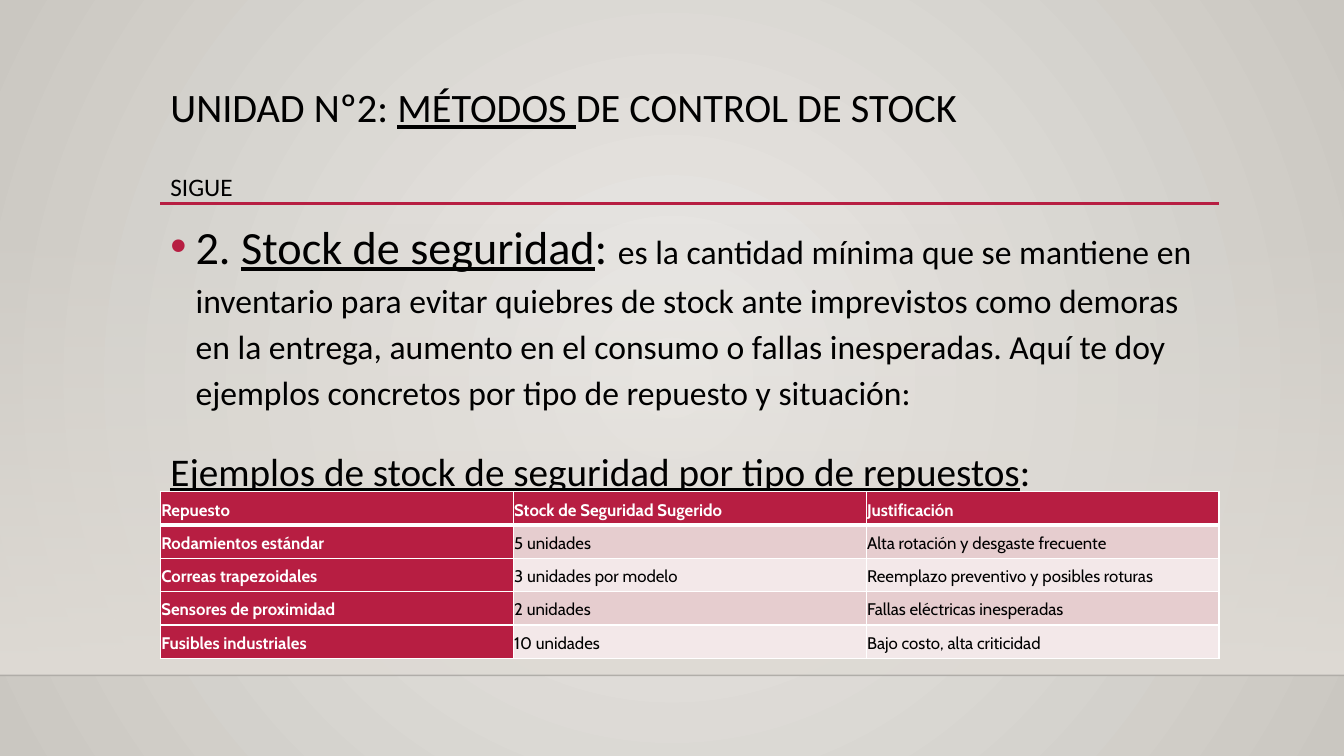
from lxml.etree import SubElement
from pptx import Presentation
from pptx.dml.color import RGBColor
from pptx.enum.shapes import MSO_CONNECTOR, MSO_SHAPE
from pptx.enum.text import MSO_ANCHOR, MSO_AUTO_SIZE, PP_ALIGN
from pptx.oxml.ns import qn
from pptx.util import Inches, Pt

RED = RGBColor(0xB7, 0x1E, 0x42)
BLACK = RGBColor(0, 0, 0)
WHITE = RGBColor(255, 255, 255)
CENTRE_GREY = RGBColor(0xEC, 0xEA, 0xE7)
EDGE_GREY = RGBColor(0xCA, 0xC7, 0xC1)
WALL = RGBColor(0xDF, 0xDB, 0xD5)
BAND_DARK = RGBColor(0xE6, 0xCD, 0xCF)
BAND_LIGHT = RGBColor(0xF3, 0xE8, 0xE9)

prs = Presentation()
prs.slide_width, prs.slide_height = Inches(13.33), Inches(7.5)
W = prs.slide_width
LEFT, WIDTH = Inches(1.59), Inches(10.5)
RULE_Y, FLOOR_Y = Inches(2.02), Inches(6.7)
s = prs.slides.add_slide(prs.slide_layouts[1])
title, body = s.shapes.title, s.placeholders[1]


def add_runs(p, runs, **common):
    for text, formats in runs:
        r = p.add_run()
        r.text = text
        for name, value in {**common, **formats}.items():
            if name == "color":
                r.font.color.rgb = value
            else:
                setattr(r.font, name, value)


def set_stops(fill, colors):
    fill.gradient()
    for stop, color, position in zip(fill.gradient_stops, colors, (0, 1)):
        stop.color.rgb = color
        stop.position = position


# Background: radial gradient
set_stops(s.background.fill, (CENTRE_GREY, EDGE_GREY))
grad = s._element.find(".//" + qn("p:bg")).find(".//" + qn("a:gradFill"))
grad.remove(grad.find(qn("a:lin")))
circle = SubElement(grad, qn("a:path"), path="circle")
SubElement(circle, qn("a:fillToRect"), l="50000", t="50000", r="50000", b="50000")

# Wall that fades in towards the floor
wall_top = Inches(2.21)
wall = s.shapes.add_shape(MSO_SHAPE.RECTANGLE, 0, wall_top, W, FLOOR_Y - wall_top)
wall.shadow.inherit = False
wall.line.fill.background()
set_stops(wall.fill, (WALL, WALL))
wall.fill.gradient_angle = 270
first_stop = wall._element.spPr.find(".//" + qn("a:srgbClr"))
SubElement(first_stop, qn("a:alpha"), val="0")

# Floor line and title rule
for x1, x2, y, color, weight, alpha in (
    (0, W, FLOOR_Y, BLACK, 1, 20),
    (LEFT, LEFT + WIDTH, RULE_Y, RED, 2.5, 100),
):
    line = s.shapes.add_connector(MSO_CONNECTOR.STRAIGHT, x1, y, x2, y)
    line.line.color.rgb = color
    line.line.width = Pt(weight)
    spPr = line._element.spPr
    SubElement(spPr.find(".//" + qn("a:srgbClr")), qn("a:alpha"), val=str(alpha * 1000))
    SubElement(spPr, qn("a:effectLst"))

# Placeholders, brought in front of the decoration
for sp, top, height in ((title, 0.82, 1.21), (body, 2.03, 4.66)):
    sp.left, sp.top, sp.width, sp.height = LEFT, Inches(top), WIDTH, Inches(height)
    s.shapes._spTree.append(sp._element)
    tf = sp.text_frame
    tf.word_wrap = True
    tf.auto_size = MSO_AUTO_SIZE.NONE
    tf.vertical_anchor = MSO_ANCHOR.TOP

# Title
calibri = {"name": "Calibri", "color": BLACK}
p = title.text_frame.paragraphs[0]
p.alignment = PP_ALIGN.LEFT
p.line_spacing = 0.9
p.space_before = Pt(0)
add_runs(p, (
    ("UNIDAD Nº2: ", {}),
    ("MÉTODOS ", {"underline": True}),
    ("DE CONTROL DE STOCK", {}),
), size=Pt(28.8), **calibri)
for _ in range(2):
    p.add_line_break()
for br in p._p.findall(qn("a:br")):
    SubElement(br, qn("a:rPr"), sz="2880")
add_runs(p, (("SIGUE", {}),), size=Pt(18), **calibri)

# Body
tf = body.text_frame
bullet_p, examples_p = tf.paragraphs[0], tf.add_paragraph()
for p, spacing, before, indent in (
    (bullet_p, 1.15, 0, 0.25), (examples_p, 1.2, 10, 0),
):
    p.line_spacing = spacing
    p.space_before, p.space_after = Pt(before), Pt(8)
    pPr = p._p.get_or_add_pPr()
    pPr.set("marL", str(Inches(indent)))
    pPr.set("indent", str(-Inches(indent)))
    if indent:
        SubElement(SubElement(pPr, qn("a:buClr")), qn("a:srgbClr"), val=str(RED))
        SubElement(pPr, qn("a:buFont"), typeface="Arial")
        SubElement(pPr, qn("a:buChar"), char="•")
    else:
        SubElement(pPr, qn("a:buNone"))
add_runs(bullet_p, (
    ("2. ", {}),
    ("Stock de seguridad", {"underline": True}),
    (": ", {}),
    ("es la cantidad mínima que se mantiene en inventario para evitar quiebres "
     "de stock ante imprevistos como demoras en la entrega, aumento en el consumo "
     "o fallas inesperadas. Aquí te doy ejemplos concretos por tipo de repuesto "
     "y situación:", {"size": Pt(24)}),
), size=Pt(33), **calibri)
add_runs(examples_p, (
    ("Ejemplos de stock de seguridad por tipo de repuestos", {"underline": True}),
    (":", {}),
), size=Pt(28), **calibri)

# Table
rows = (
    ("Repuesto", "Stock de Seguridad Sugerido", "Justificación"),
    ("Rodamientos estándar", "5 unidades", "Alta rotación y desgaste frecuente"),
    ("Correas trapezoidales", "3 unidades por modelo",
     "Reemplazo preventivo y posibles roturas"),
    ("Sensores de proximidad", "2 unidades", "Fallas eléctricas inesperadas"),
    ("Fusibles industriales", "10 unidades", "Bajo costo, alta criticidad"),
)
table = s.shapes.add_table(len(rows), len(rows[0]), LEFT, Inches(4.88),
                           WIDTH, Inches(0.33) * len(rows)).table
table.first_col = True
for i, row in enumerate(rows):
    for j, text in enumerate(row):
        cell = table.cell(i, j)
        heading = i == 0 or j == 0
        for side in ("left", "top", "right", "bottom"):
            setattr(cell, "margin_" + side, Inches(0.01))
        cell.vertical_anchor = MSO_ANCHOR.MIDDLE
        # White borders, thicker under the header row
        for side in "LRTB":
            thick = (i, side) in ((0, "B"), (1, "T"))
            border = SubElement(cell._tc.get_or_add_tcPr(), qn("a:ln" + side),
                                w=str(Pt(3 if thick else 1)))
            SubElement(SubElement(border, qn("a:solidFill")),
                       qn("a:srgbClr"), val=str(WHITE))
        cell.fill.solid()
        band = BAND_DARK if i % 2 else BAND_LIGHT
        cell.fill.fore_color.rgb = RED if heading else band
        p = cell.text_frame.paragraphs[0]
        p.line_spacing = 1.15
        p.space_after = Pt(8)
        add_runs(p, ((text, {}),), name="Cabin", size=Pt(12), bold=heading,
                 color=WHITE if heading else BLACK)

prs.save("out.pptx")
